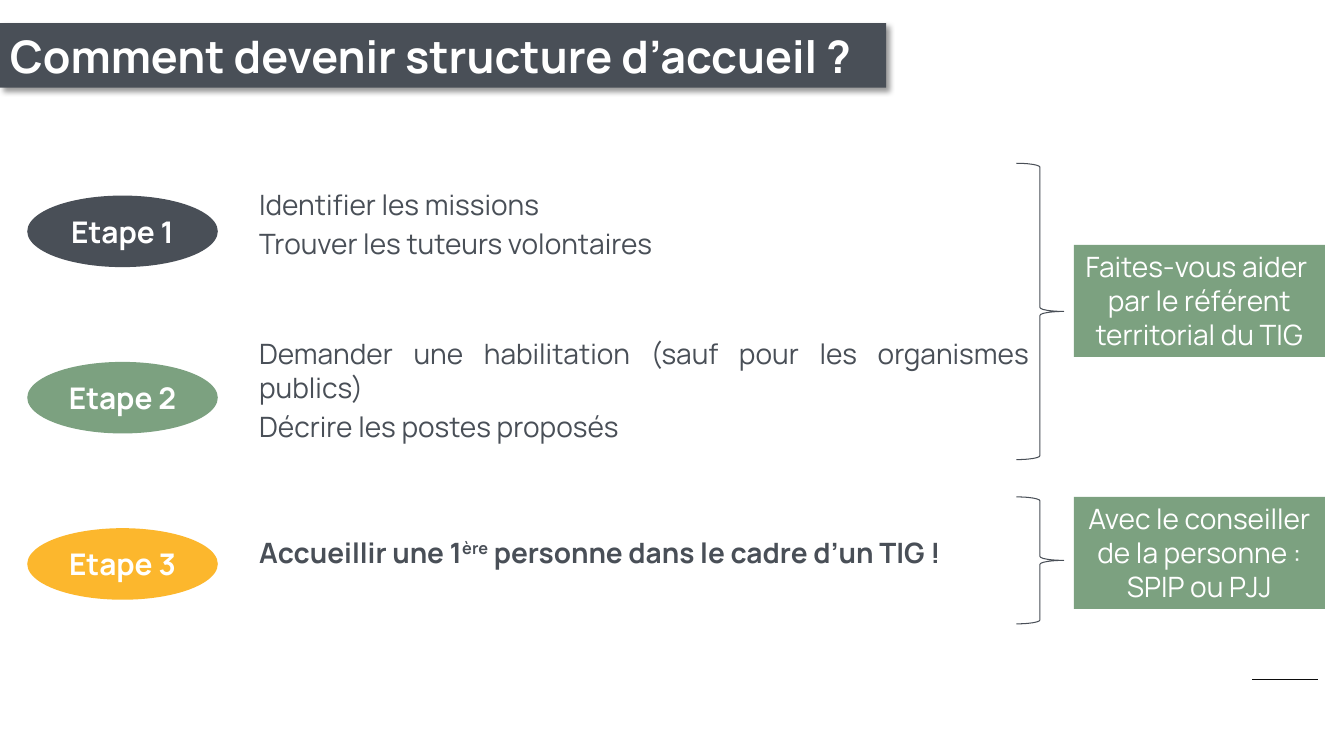
from dataclasses import dataclass

from lxml.etree import SubElement
from pptx import Presentation
from pptx.dml.color import RGBColor
from pptx.enum.shapes import MSO_CONNECTOR, MSO_SHAPE
from pptx.enum.text import MSO_ANCHOR, PP_ALIGN
from pptx.oxml.ns import qn
from pptx.util import Inches, Pt


@dataclass(frozen=True)
class Theme:
    font: str = "Manrope"
    slate: str = "494F57"
    green: str = "7CA180"
    amber: str = "FCB72D"
    white: str = "FFFFFF"
    black: str = "0C0C0C"
    shadow: str = "000000"
    title: float = 32
    step: float = 21.3
    body: float = 20
    para_gap: float = 4


T = Theme()


def rgb(color):
    return RGBColor.from_string(color)


def box(x, y, w, h):
    return Inches(x), Inches(y), Inches(w), Inches(h)


def add_run(p, text, size, color, bold=False, superscript=False):
    r = p.add_run()
    r.text = text
    r.font.name = T.font
    r.font.size = Pt(size)
    r.font.bold = bold
    r.font.color.rgb = rgb(color)
    if superscript:
        r.font._element.set("baseline", "30000")


def add_paragraph(tf, index, align):
    p = tf.paragraphs[0] if index == 0 else tf.add_paragraph()
    p.alignment = align
    return p


def add_panel(s, kind, bounds, fill, lines, size, bold=False,
              align=PP_ALIGN.CENTER, anchor=MSO_ANCHOR.MIDDLE):
    sp = s.shapes.add_shape(kind, *box(*bounds))
    sp.shadow.inherit = False
    sp.fill.solid()
    sp.fill.fore_color.rgb = rgb(fill)
    sp.line.fill.background()
    tf = sp.text_frame
    tf.word_wrap = True
    tf.vertical_anchor = anchor
    for i, line in enumerate(lines):
        add_run(add_paragraph(tf, i, align), line, size, T.white, bold)
    return sp


def add_drop_shadow(sp):
    effects = sp._element.spPr.find(qn("a:effectLst"))
    shadow = SubElement(effects, qn("a:outerShdw"), blurRad=str(Pt(4)), dist=str(Pt(3)),
                        dir="2700000", algn="tl", rotWithShape="0")
    color = SubElement(shadow, qn("a:srgbClr"), val=T.shadow)
    SubElement(color, qn("a:alpha"), val="40000")


def add_title(s, text):
    sp = add_panel(s, MSO_SHAPE.RECTANGLE, (0, 0.23, 8.79, 0.64), T.slate,
                   [text], T.title, True, PP_ALIGN.LEFT)
    add_drop_shadow(sp)


def add_actions(s, y, h, paragraphs, bold):
    tf = s.shapes.add_textbox(*box(2.57, y, 7.64, h)).text_frame
    tf.word_wrap = True
    tf.margin_left = tf.margin_right = tf.margin_top = tf.margin_bottom = 0
    for i, runs in enumerate(paragraphs):
        p = add_paragraph(tf, i, PP_ALIGN.JUSTIFY)
        if i:
            p.space_before = Pt(T.para_gap)
        for j, text in enumerate(runs):
            add_run(p, text, T.body, T.slate, bold, superscript=j == 1)


def add_brace(s, y, h):
    sp = s.shapes.add_shape(MSO_SHAPE.RIGHT_BRACE, *box(10.08, y, 0.47, h))
    sp.shadow.inherit = False
    sp.fill.background()
    sp.line.color.rgb = rgb(T.slate)
    sp.line.width = Pt(0.75)


def add_rule(s):
    line = s.shapes.add_connector(MSO_CONNECTOR.STRAIGHT, Inches(12.42), Inches(6.74),
                                  Inches(13.07), Inches(6.74))
    line.line.color.rgb = rgb(T.black)
    line.line.width = Pt(1)
    SubElement(line._element.spPr, qn("a:effectLst"))


def main():
    prs = Presentation()
    prs.slide_width, prs.slide_height = Inches(13.33), Inches(7.5)
    s = prs.slides.add_slide(prs.slide_layouts[6])

    add_rule(s)
    add_title(s, "Comment devenir structure d’accueil ?")

    steps = [
        (T.slate, 1.86, 0.73, False,
         [["Identifier les missions"], ["Trouver les tuteurs volontaires"]]),
        (T.green, 3.34, 1.06, False,
         [["Demander une habilitation (sauf pour les organismes publics)"],
          ["Décrire les postes proposés"]]),
        (T.amber, 5.31, 0.34, True,
         [["Accueillir une 1", "ère", " personne dans le cadre d’un TIG !"]]),
    ]
    for i, (color, y, h, bold, paragraphs) in enumerate(steps):
        add_panel(s, MSO_SHAPE.OVAL, (0.27, 1.94 + 1.65 * i, 1.89, 0.71), color,
                  [f"Etape {i + 1}"], T.step, True)
        add_actions(s, y, h, paragraphs, bold)

    helpers = [
        (1.62, 2.94, 2.43, ["Faites-vous aider ", "par le référent territorial du TIG"]),
        (4.93, 1.26, 4.93, ["Avec le conseiller de la personne : SPIP ou PJJ"]),
    ]
    for brace_y, brace_h, y, lines in helpers:
        add_brace(s, brace_y, brace_h)
        add_panel(s, MSO_SHAPE.RECTANGLE, (10.65, y, 2.49, 1.11), T.green,
                  lines, T.body, anchor=MSO_ANCHOR.TOP)

    prs.save("out.pptx")


if __name__ == "__main__":
    main()
